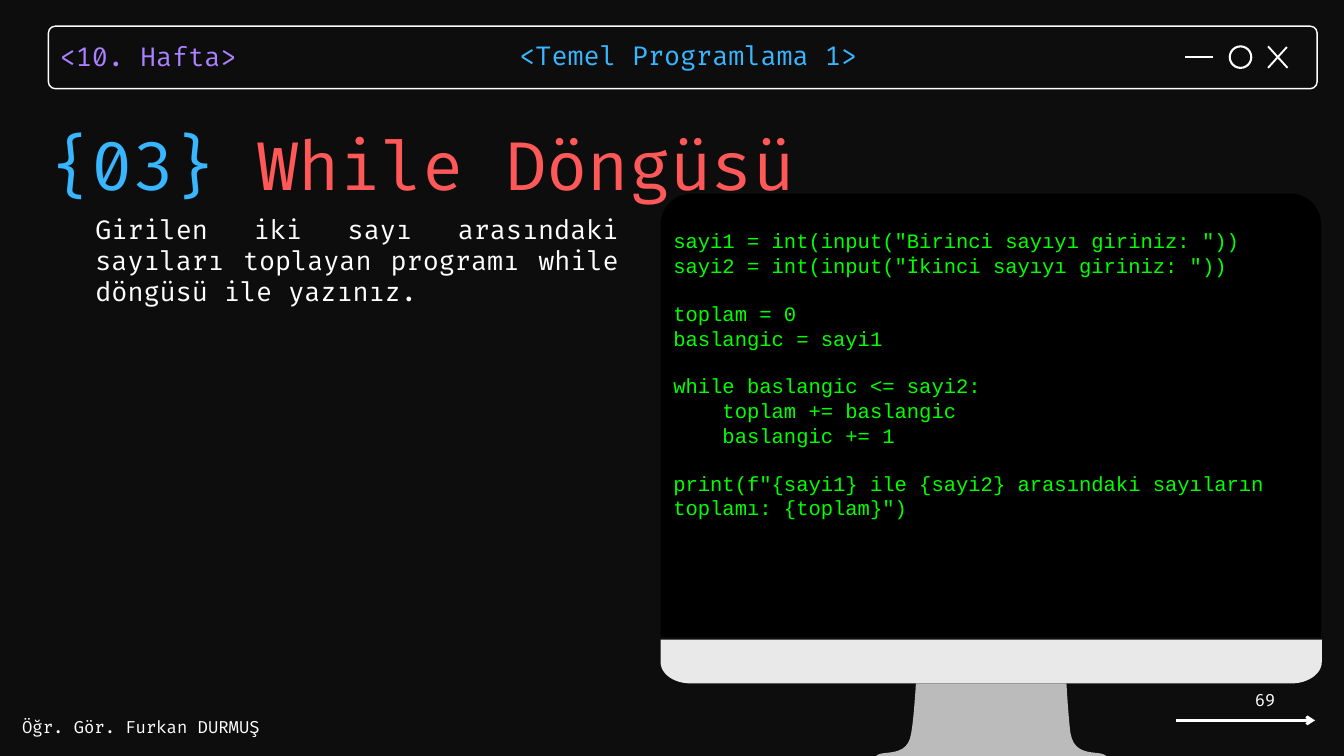
import pptx
import pptx.util
import pptx.dml.color
import pptx.enum.shapes
import pptx.enum.text
import pptx.oxml.ns
import lxml.etree

Inches, Pt = pptx.util.Inches, pptx.util.Pt
SHAPE = pptx.enum.shapes.MSO_SHAPE
ALIGN = pptx.enum.text.PP_ALIGN
ANCHOR = pptx.enum.text.MSO_ANCHOR

# Content
WHITE, BLUE = "FFFFFF", "38B6FF"
FIRA = "Fira Code"
WEEK = [[("<10. Hafta>", "AB81FF")]]
COURSE = [[("<Temel Programlama 1>", BLUE)]]
AUTHOR = [[("Öğr. Gör. Furkan DURMUŞ", WHITE)]]
TASK = [[("Girilen iki sayı arasındaki sayıları toplayan programı "
          "while döngüsü ile yazınız.", WHITE)]]
PAGE = [[("69", WHITE)]]
TITLE = [[("{03} ", BLUE), ("While Döngüsü", "FF5858")]]
CODE_BLOCKS = [
    ['sayi1 = int(input("Birinci sayıyı giriniz: "))',
     'sayi2 = int(input("İkinci sayıyı giriniz: "))'],
    ["toplam = 0", "baslangic = sayi1"],
    ["while baslangic <= sayi2:", "    toplam += baslangic", "    baslangic += 1"],
    ['print(f"{sayi1} ile {sayi2} arasındaki sayıların toplamı: {toplam}")'],
]
CODE_LINE = 24.9  # height of one code line, in points

# Text: place, paragraphs, size, paragraph format
TEXTS = [
    ((0.89, 0.52, 3.4, 0.53), WEEK, 28, {"line_spacing": Pt(39.2)}),
    ((7.73, 0.51, 5.29, 0.53), COURSE, 28, {"line_spacing": Pt(39.2)}),
    ((0.33, 10.67, 3.67, 0.3), AUTHOR, 18, {}),
    ((1.42, 3.17, 7.78, 1.41), TASK, 28, {"alignment": ALIGN.JUSTIFY}),
    ((0.75, 1.61, 19.25, 1.41), TITLE, 72, {"line_spacing": Pt(102.6)}),
]

# Outlines: a point is a straight side, three points are a curve
CHIN = [(9.83, 9.52), (9.83, 9.85),
        ((9.83, 10.03), (10.03, 10.17), (10.28, 10.17)), (19.22, 10.17),
        ((19.46, 10.17), (19.67, 10.03), (19.67, 9.85)), (19.67, 9.52)]
STAND = [(13.63, 10.17),
         ((13.63, 10.17), (13.6, 10.69), (13.56, 10.91)),
         ((13.51, 11.28), (13.15, 11.16), (13.05, 11.24)),
         ((13.03, 11.25), (13.04, 11.27), (13.06, 11.27)), (16.44, 11.27),
         ((16.46, 11.27), (16.46, 11.25), (16.45, 11.24)),
         ((16.35, 11.16), (15.99, 11.28), (15.93, 10.91)),
         ((15.9, 10.69), (15.87, 10.17), (15.87, 10.17))]

deck = pptx.Presentation()
deck.slide_width, deck.slide_height = Inches(20), Inches(11.25)
slide = deck.slides.add_slide(deck.slide_layouts[6])


def color(hex_code):
    return pptx.dml.color.RGBColor.from_string(hex_code)


def style(shape, fill=None, line=None, width=1):
    shape.shadow.inherit = False
    if fill:
        shape.fill.solid()
        shape.fill.fore_color.rgb = color(fill)
    else:
        shape.fill.background()
    if line:
        shape.line.color.rgb = color(line)
        shape.line.width = Pt(width)
    else:
        shape.line.fill.background()


def add_shape(kind, place, adjustments=(), **look):
    shape = slide.shapes.add_shape(kind, *map(Inches, place))
    for number, value in enumerate(adjustments):
        shape.adjustments[number] = value
    style(shape, **look)


def add_line(start, end, width, arrow=False):
    line = slide.shapes.add_connector(
        pptx.enum.shapes.MSO_CONNECTOR.STRAIGHT, *map(Inches, start + end))
    line.line.color.rgb = color(WHITE)
    line.line.width = Pt(width)
    properties = line.line._get_or_add_ln()
    if arrow:
        lxml.etree.SubElement(properties, pptx.oxml.ns.qn("a:tailEnd"), type="arrow")
    lxml.etree.SubElement(properties.getparent(), pptx.oxml.ns.qn("a:effectLst"))


def add_outline(sides, fill, steps=12):
    points = [sides[0]]
    for side in sides[1:]:
        if not isinstance(side[0], tuple):
            points.append(side)
            continue
        corners = (points[-1],) + side
        for step in range(1, steps + 1):
            t = step / steps
            weights = ((1 - t) ** 3, 3 * t * (1 - t) ** 2, 3 * t * t * (1 - t), t ** 3)
            points.append(tuple(sum(w * c[axis] for w, c in zip(weights, corners))
                                for axis in (0, 1)))
    points = [(Inches(x), Inches(y)) for x, y in points]
    builder = slide.shapes.build_freeform(*points[0])
    builder.add_line_segments(points[1:], close=True)
    style(builder.convert_to_shape(), fill)


def add_text(place, paragraphs, size, layout, font=FIRA, margin=0, anchor=ANCHOR.TOP):
    frame = slide.shapes.add_textbox(*map(Inches, place)).text_frame
    settings = {"word_wrap": True, "vertical_anchor": anchor}
    if margin is not None:
        settings.update({f"margin_{side}": margin
                         for side in ("left", "top", "right", "bottom")})
    for name, value in settings.items():
        setattr(frame, name, value)
    for number, runs in enumerate(paragraphs):
        paragraph = frame.add_paragraph() if number else frame.paragraphs[0]
        for name, value in layout.items():
            setattr(paragraph, name, value)
        for words, ink in runs:
            run = paragraph.add_run()
            run.text = words
            for name, value in {"size": Pt(size), "name": font}.items():
                setattr(run.font, name, value)
            run.font.color.rgb = color(ink)
    return frame


slide.background.fill.solid()
slide.background.fill.fore_color.rgb = color("0D0D0D")

# Page arrow and window bar with its three buttons
add_line((17.5, 10.72), (19.57, 10.72), 3, arrow=True)
add_shape(SHAPE.ROUNDED_RECTANGLE, (0.72, 0.39, 18.88, 0.93), [0.11], line=WHITE, width=1.5)
for start, end in [((18.87, 0.69), (19.16, 1.01)), ((19.15, 0.7), (18.87, 1.01)),
                   ((17.64, 0.85), (18.05, 0.85))]:
    add_line(start, end, 2)
add_shape(SHAPE.OVAL, (18.3, 0.69, 0.32, 0.32), line=WHITE, width=2.25)

# Texts
for place, paragraphs, size, layout in TEXTS:
    add_text(place, paragraphs, size, layout)
add_text((16.75, 10.21, 2.33, 0.4), PAGE, 18, {"alignment": ALIGN.RIGHT},
         margin=None, anchor=ANCHOR.MIDDLE)

# Monitor
add_shape(SHAPE.ROUND_2_SAME_RECTANGLE, (9.83, 2.88, 9.83, 6.6), [0.07, 0], fill="000000")
add_outline(CHIN, "E9E9E9")
add_outline(STAND, "BBBBBB")
add_shape(SHAPE.RECTANGLE, (10.27, 3.17, 9.04, 6.1), fill="000000", line="000000", width=2)

# Code on the screen, one line of space between blocks
code_lines = [[(line, "00FF00")] for block in CODE_BLOCKS for line in block]
code = add_text((10.02, 3.4, 9.04, 4.44), code_lines, 22, {}, font="Courier New")
first_line = 0
for block in CODE_BLOCKS[:-1]:
    first_line += len(block)
    code.paragraphs[first_line].space_before = Pt(CODE_LINE)

deck.save("out.pptx")
